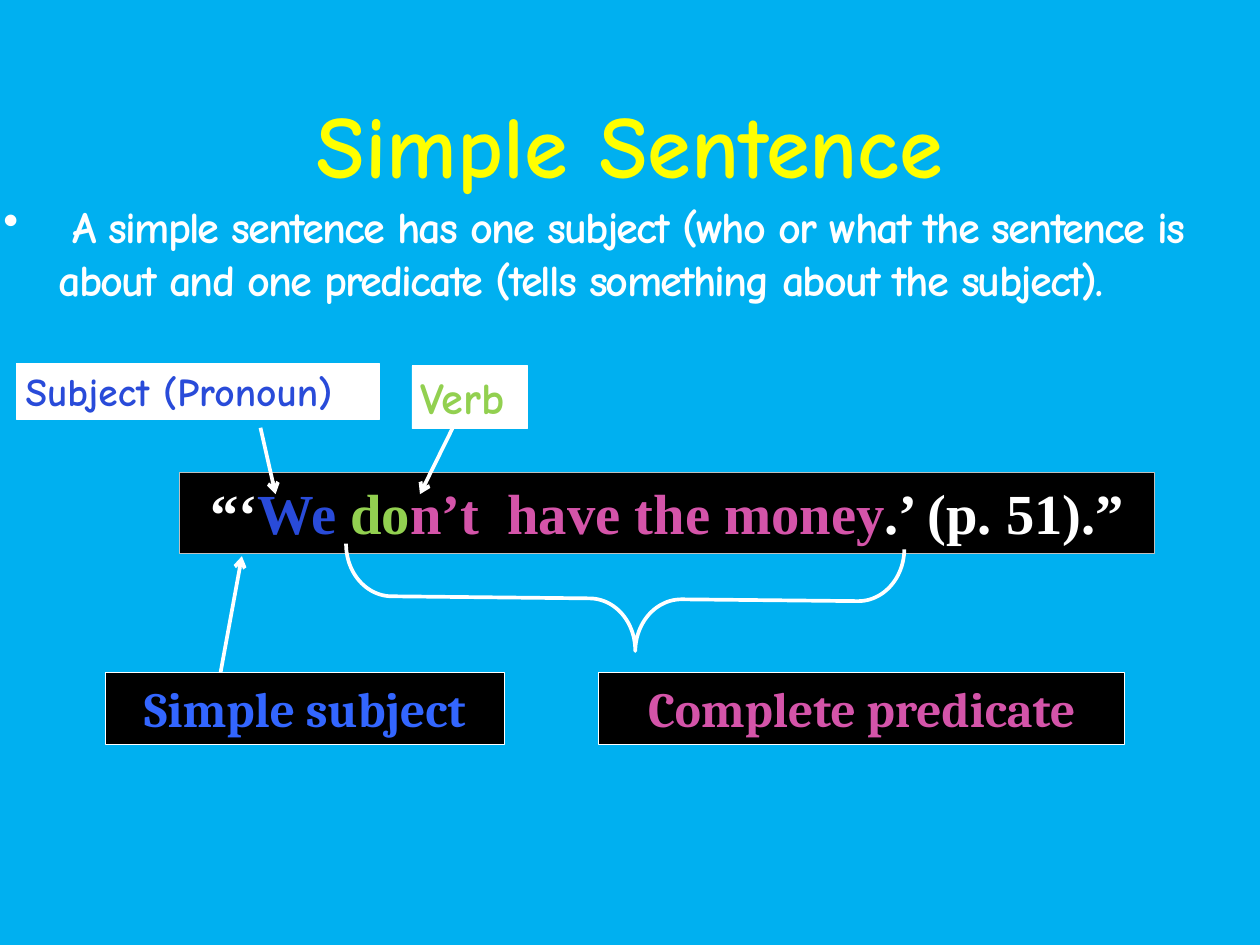
from lxml import etree
from pptx import Presentation
from pptx.dml.color import RGBColor
from pptx.enum import shapes, text
from pptx.oxml import ns
from pptx.util import Pt

PX = 9144  # 100 px to the inch
SKY = RGBColor(0x00, 0xB0, 0xF0)
YELLOW = RGBColor(0xFF, 0xFF, 0x00)
WHITE = RGBColor(0xFF, 0xFF, 0xFF)
BLACK = RGBColor(0x00, 0x00, 0x00)
GREY = RGBColor(0xBF, 0xBF, 0xBF)
BLUE = RGBColor(0x29, 0x4B, 0xD9)
BRIGHT_BLUE = RGBColor(0x33, 0x66, 0xFF)
GREEN = RGBColor(0x92, 0xD0, 0x50)
PINK = RGBColor(0xD4, 0x54, 0xA9)
COMIC, SERIF, CAMBRIA = "Comic Neue", "Times New Roman", "Cambria"
LEFT, CENTER = text.PP_ALIGN.LEFT, text.PP_ALIGN.CENTER
FIT, FIXED = text.MSO_AUTO_SIZE.SHAPE_TO_FIT_TEXT, text.MSO_AUTO_SIZE.NONE
TOP, MIDDLE = text.MSO_ANCHOR.TOP, text.MSO_ANCHOR.MIDDLE


def emu(*lengths):
    return [n * PX for n in lengths]


def write(sp, runs, font, size, align=LEFT, inset=(10, 5), wrap=True,
          anchor=TOP, fit=FIT):
    """Fill a shape with one paragraph of (words, colour) runs."""
    tf = sp.text_frame
    x, y = emu(*inset)
    frame = {"margin_left": x, "margin_right": x, "margin_top": y,
             "margin_bottom": y, "word_wrap": wrap,
             "vertical_anchor": anchor, "auto_size": fit}
    for name, value in frame.items():
        setattr(tf, name, value)
    p = tf.paragraphs[0]
    p.alignment = align
    for words, color in runs:
        r = p.add_run()
        r.text = words
        for name, value in {"name": font, "size": Pt(size), "bold": True}.items():
            setattr(r.font, name, value)
        r.font.color.rgb = color
    return p


prs = Presentation()
prs.slide_width, prs.slide_height = emu(1422, 1067)
s = prs.slides.add_slide(prs.slide_layouts[5])
s.background.fill.solid()
s.background.fill.fore_color.rgb = SKY

title = s.shapes.title
title.left, title.top, title.width, title.height = emu(139, 22, 1144, 278)
write(title, [("Simple Sentence", YELLOW)], COMIC, 72, CENTER, (6, 6),
      anchor=MIDDLE, fit=FIXED)

definition = s.shapes.add_textbox(*emu(-6, 220, 1422, 192))
p = write(definition, [(" A simple sentence has one subject (who or what the sentence is "
                        "about and one predicate (tells something about the subject).",
                        WHITE)], COMIC, 36)
pPr = p._p.get_or_add_pPr()
pPr.set("marL", str(62 * PX))
pPr.set("indent", str(-62 * PX))
etree.SubElement(pPr, ns.qn("a:buChar")).set("char", "•")
p.runs[0].font._element.set("spc", "-150")

sentence = [("“‘", WHITE), ("We ", BLUE), ("do", GREEN),
            ("n’t  have the money", PINK), (".’ (p. 51).”", WHITE)]
dark = {"align": CENTER, "inset": (14, 7)}
boxes = [
    ((203, 533, 1100, 92), BLACK, GREY, sentence, SERIF, 46, {**dark, "wrap": False}),
    ((119, 759, 450, 82), BLACK, WHITE, [("Simple subject", BRIGHT_BLUE)], CAMBRIA, 40, dark),
    ((676, 759, 593, 82), BLACK, WHITE, [("Complete predicate", PINK)], CAMBRIA, 40, dark),
    ((19, 410, 409, 64), WHITE, WHITE, [("Subject (Pronoun)", BLUE)], COMIC, 32, {"wrap": False}),
    ((465, 413, 130, 71), WHITE, WHITE, [("Verb", GREEN)], COMIC, 36, {"wrap": False}),
]
for place, fill, line, runs, font, size, layout in boxes:
    sp = s.shapes.add_shape(shapes.MSO_SHAPE.RECTANGLE, *emu(*place))
    sp.shadow.inherit = False
    sp.fill.solid()
    sp.fill.fore_color.rgb = fill
    sp.line.color.rgb = line
    sp.line.width = Pt(0.75)
    write(sp, runs, font, size, **layout)

brace = s.shapes.add_shape(shapes.MSO_SHAPE.LEFT_BRACE, *emu(646, 361, 118, 630))
brace.shadow.inherit = False
brace.rotation = 270.6
brace.adjustments[0], brace.adjustments[1] = 0.44, 0.52
brace.fill.background()
brace.line.color.rgb = WHITE
brace.line.width = Pt(3)

for ends in [(249, 759, 273, 628), (294, 483, 311, 558), (511, 483, 474, 558)]:
    arrow = s.shapes.add_connector(shapes.MSO_CONNECTOR.STRAIGHT, *emu(*ends))
    arrow.line.color.rgb = WHITE
    arrow.line.width = Pt(3)
    etree.SubElement(arrow.line._get_or_add_ln(), ns.qn("a:tailEnd")).set("type", "arrow")
    etree.SubElement(arrow._element.spPr, ns.qn("a:effectLst"))

prs.save("out.pptx")
